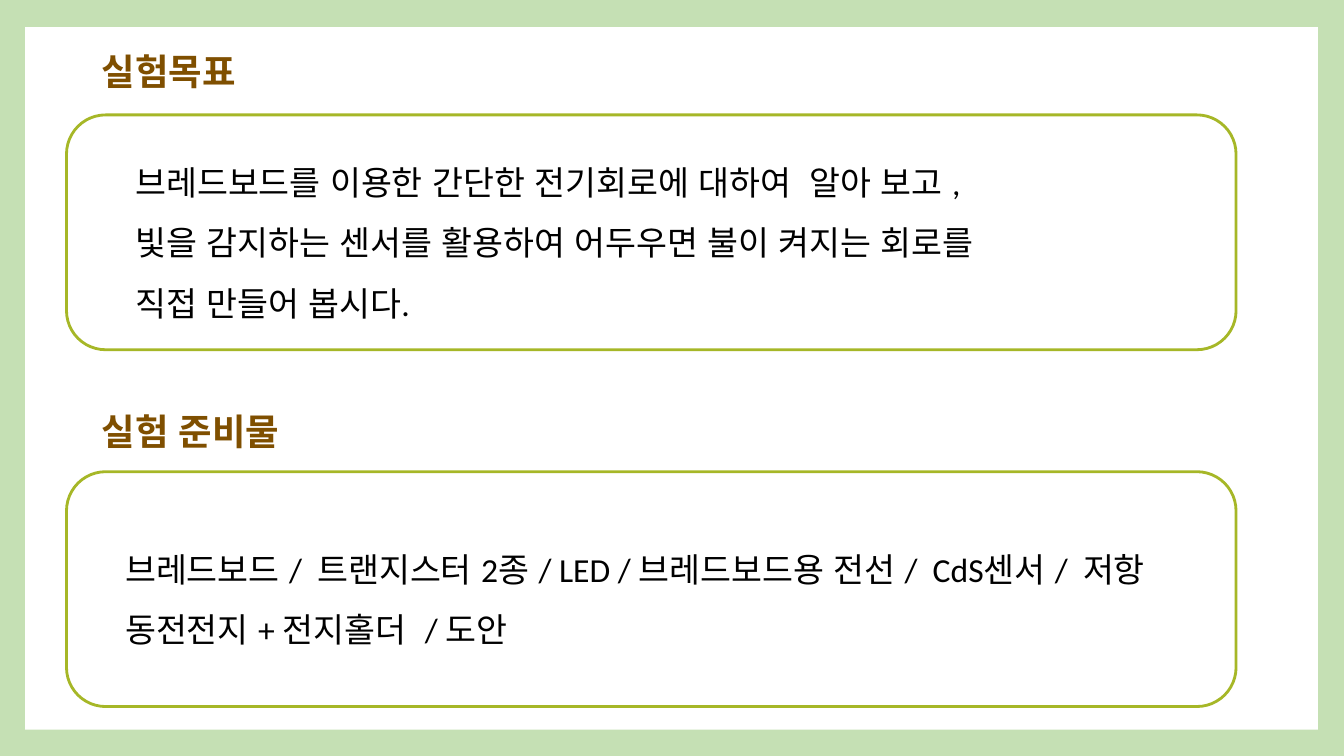
from lxml.etree import SubElement
from pptx import Presentation
from pptx.dml.color import RGBColor
from pptx.enum.shapes import MSO_SHAPE as SHAPE
from pptx.enum.text import MSO_ANCHOR as ANCHOR, PP_ALIGN as ALIGN
from pptx.oxml.ns import qn
from pptx.util import Inches, Pt

COLORS = {"border": "C5E0B4", "paper": "FFFFFF", "outline": "A6B727",
          "heading": "7F4F00", "body": "000000"}
FONT = "Calibri"
EAST_ASIAN_FONT = "Arial"
SECTIONS = [
    {"heading": "실험목표", "heading_top": 0.39, "heading_width": 1.96,
     "box_top": 1.14, "indent": 0.47,
     "lines": ["브레드보드를 이용한 간단한 전기회로에 대하여  알아 보고 ,",
               "빛을 감지하는 센서를 활용하여 어두우면 불이 켜지는 회로를",
               "직접 만들어 봅시다."]},
    {"heading": "실험 준비물", "heading_top": 3.96, "heading_width": 2.3,
     "box_top": 4.68, "indent": 0.37,
     "lines": ["브레드보드 /  트랜지스터 2종 / LED / 브레드보드용 전선 /  CdS센서 /  저항",
               "동전전지 + 전지홀더  / 도안"]},
]


def rgb(name):
    return RGBColor.from_string(COLORS[name])


def write(sp, lines, size, color, bold=False, anchor=ANCHOR.TOP,
          spacing=1.0, indent=0, inset_y=0.1):
    tf = sp.text_frame
    tf.word_wrap = True
    tf.vertical_anchor = anchor
    tf.margin_left = tf.margin_right = Inches(0.1)
    tf.margin_top = tf.margin_bottom = Inches(inset_y)
    for i, line in enumerate(lines):
        p = tf.paragraphs[0] if i == 0 else tf.add_paragraph()
        p.alignment = ALIGN.LEFT
        p.line_spacing = spacing
        p.space_before = Pt(0)
        p._p.get_or_add_pPr().set("indent", str(Inches(indent)))
        r = p.add_run()
        r.text = line
        r.font.name = FONT
        r.font.size = Pt(size)
        r.font.bold = bold
        r.font.color.rgb = rgb(color)
        rpr = r._r.get_or_add_rPr()
        SubElement(rpr, qn("a:ea")).set("typeface", EAST_ASIAN_FONT)


def add_panel(s, kind, box, outline=None):
    sp = s.shapes.add_shape(kind, *map(Inches, box))
    sp.shadow.inherit = False
    sp.fill.solid()
    sp.fill.fore_color.rgb = rgb("paper")
    if outline:
        sp.line.color.rgb = rgb(outline)
        sp.line.width = Pt(2)
    else:
        sp.line.fill.background()
    return sp


def main():
    prs = Presentation()
    prs.slide_width, prs.slide_height = Inches(13.33), Inches(7.5)
    s = prs.slides.add_slide(prs.slide_layouts[5])
    s.background.fill.solid()
    s.background.fill.fore_color.rgb = rgb("border")

    paper = add_panel(s, SHAPE.RECTANGLE, (0.25, 0.27, 12.82, 6.97))
    s.shapes._spTree.insert(2, paper._element)

    for i, section in enumerate(SECTIONS):
        box = [Inches(v) for v in (0.91, section["heading_top"],
                                   section["heading_width"], 0.48)]
        if i == 0:
            heading = s.shapes.title
            heading.left, heading.top, heading.width, heading.height = box
        else:
            heading = s.shapes.add_textbox(*box)
        write(heading, [section["heading"]], 26, "heading", bold=True)

        panel = add_panel(s, SHAPE.ROUNDED_RECTANGLE,
                          (0.66, section["box_top"], 11.6, 2.33), "outline")
        write(panel, section["lines"], 24, "body", anchor=ANCHOR.MIDDLE,
              spacing=1.5, indent=section["indent"], inset_y=0.05)

    prs.save("out.pptx")


if __name__ == "__main__":
    main()
